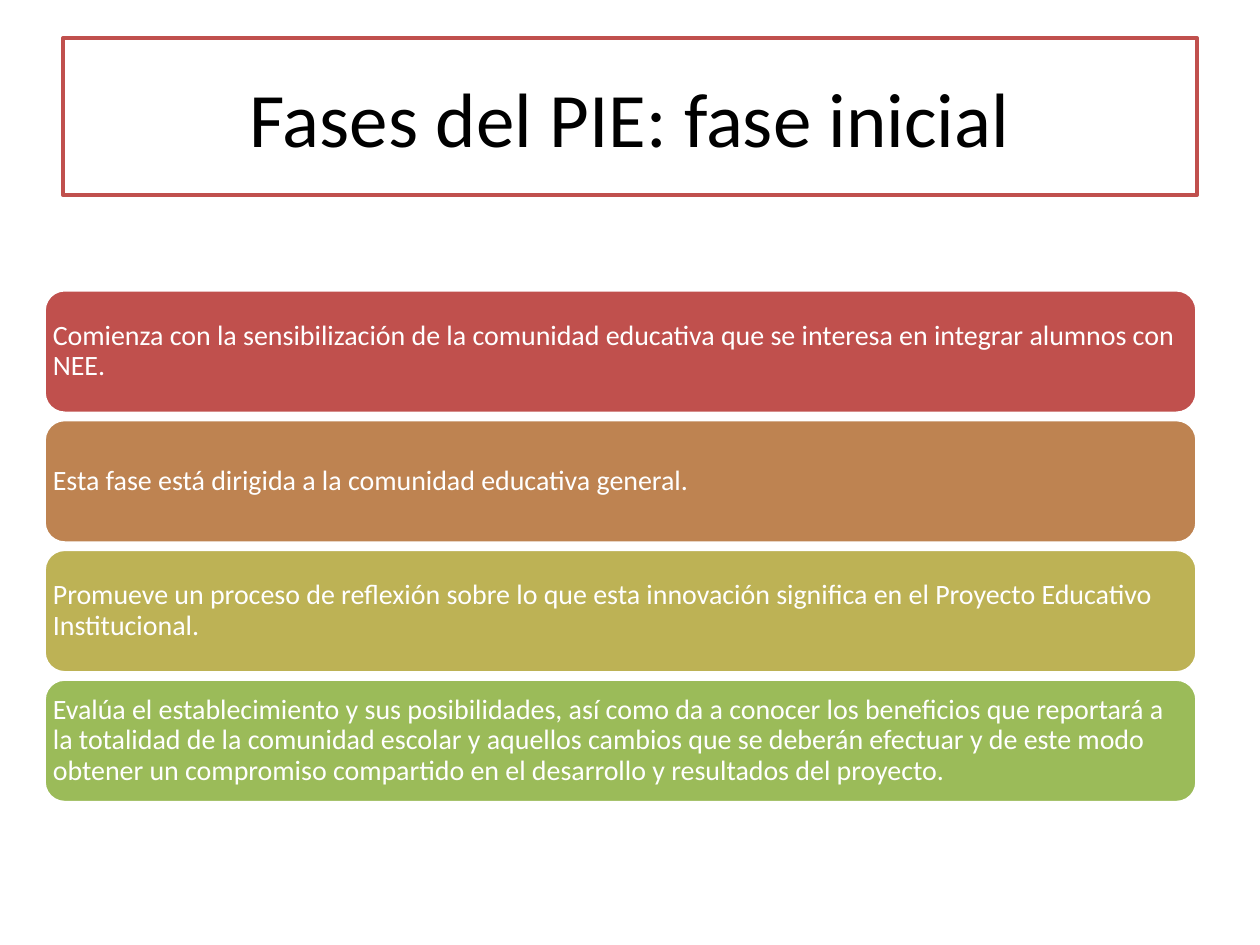
from dataclasses import dataclass

from pptx import Presentation
from pptx.dml.color import RGBColor
from pptx.enum.shapes import MSO_SHAPE
from pptx.enum.text import MSO_ANCHOR, PP_ALIGN
from pptx.util import Pt


@dataclass(frozen=True)
class Theme:
    font: str = "Calibri"
    title_size: float = 44
    body_size: float = 16
    line_width: float = 2
    white: str = "FFFFFF"
    black: str = "000000"
    accent: str = "C0504D"
    bars: tuple = ("C0504D", "BE8351", "BDB255", "9BBB59")


THEME = Theme()

TITLE = "Fases del PIE: fase inicial"
STEPS = (
    "Comienza con la sensibilización de la comunidad educativa que se interesa "
    "en integrar alumnos con NEE.",
    "Esta fase está dirigida a la comunidad educativa general.",
    "Promueve un proceso de reflexión sobre lo que esta innovación significa "
    "en el Proyecto Educativo Institucional.",
    "Evalúa el establecimiento y sus posibilidades, así como da a conocer los "
    "beneficios que reportará a la totalidad de la comunidad escolar y aquellos "
    "cambios que se deberán efectuar y de este modo obtener un compromiso "
    "compartido en el desarrollo y resultados del proyecto.",
)


def add_panel(slide, kind, box, fill, line, text, size, color, align):
    """Add a filled, outlined shape with middle-anchored text; box is in points."""
    sp = slide.shapes.add_shape(kind, *(Pt(v) for v in box))
    sp.shadow.inherit = False
    sp.fill.solid()
    sp.fill.fore_color.rgb = RGBColor.from_string(fill)
    sp.line.color.rgb = RGBColor.from_string(line)
    sp.line.width = Pt(THEME.line_width)
    tf = sp.text_frame
    tf.word_wrap = True
    tf.vertical_anchor = MSO_ANCHOR.MIDDLE
    tf.text = text
    p = tf.paragraphs[0]
    p.alignment = align
    font = p.runs[0].font
    font.name = THEME.font
    font.size = Pt(size)
    font.color.rgb = RGBColor.from_string(color)
    return sp


def add_title(slide, box):
    add_panel(slide, MSO_SHAPE.RECTANGLE, box, THEME.white, THEME.accent,
              TITLE, THEME.title_size, THEME.black, PP_ALIGN.CENTER)


def add_steps(slide, box, gap=3.6, inset=1.6):
    """Stack one rounded bar per step, equally high, to fill the box."""
    left, top, width, height = box
    bar_height = (height - gap * (len(STEPS) - 1)) / len(STEPS)
    for i, (text, fill) in enumerate(zip(STEPS, THEME.bars)):
        bar = (left, top + i * (bar_height + gap), width, bar_height)
        sp = add_panel(slide, MSO_SHAPE.ROUNDED_RECTANGLE, bar, fill, THEME.white,
                       text, THEME.body_size, THEME.white, PP_ALIGN.LEFT)
        tf = sp.text_frame
        tf.margin_left = tf.margin_right = Pt(inset)
        tf.margin_top = tf.margin_bottom = Pt(inset)
        tf.paragraphs[0].line_spacing = 0.9


def main():
    prs = Presentation()
    prs.slide_width, prs.slide_height = Pt(720), Pt(540)
    slide = prs.slides.add_slide(prs.slide_layouts[6])
    add_title(slide, (36, 21.6, 648, 90))
    add_steps(slide, (25.2, 165.6, 658.8, 293))
    prs.save("out.pptx")


if __name__ == "__main__":
    main()
